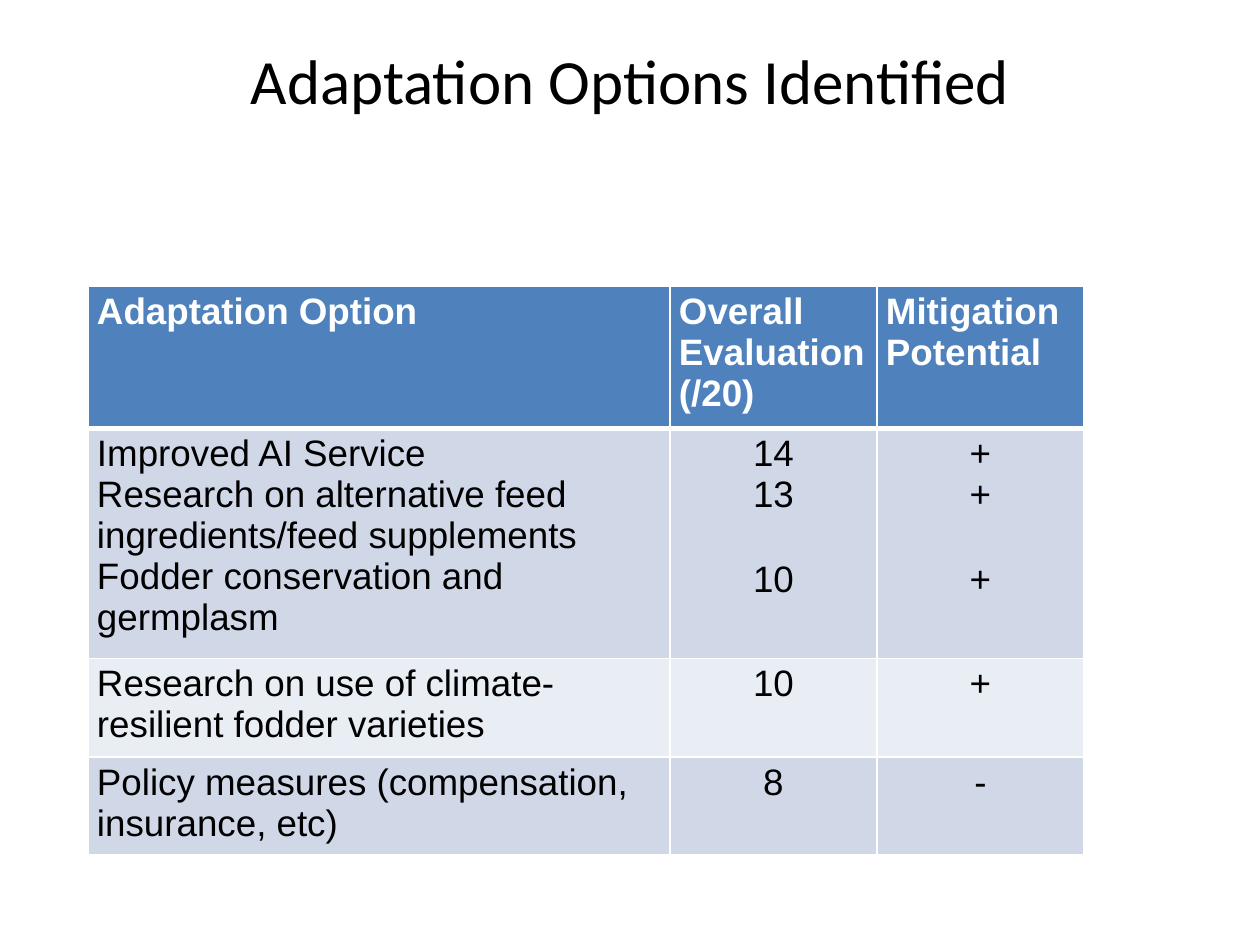
import lxml.etree
import pptx
import pptx.dml.color
import pptx.enum.text
import pptx.oxml.ns
import pptx.util

RGBColor = pptx.dml.color.RGBColor
ALIGN = pptx.enum.text.PP_ALIGN
ANCHOR = pptx.enum.text.MSO_ANCHOR

BLACK = RGBColor(0x00, 0x00, 0x00)
WHITE = RGBColor(0xFF, 0xFF, 0xFF)
HEADER_BLUE = RGBColor(0x4F, 0x81, 0xBD)
BAND_DARK = RGBColor(0xD0, 0xD8, 0xE8)
BAND_LIGHT = RGBColor(0xE9, 0xED, 0xF4)

PX_PER_INCH = 126
TITLE = "Adaptation Options Identified"
TITLE_BOX = (63, 0, 1134, 158)
TABLE_ORIGIN = (88, 286)
COLUMN_WIDTHS = [582, 207, 207]
ROW_HEIGHTS = [141, 186, 98, 98]
MARGIN_X, MARGIN_Y = 9, 5
SKIPPED_LINE = 25

HEADER = [["Adaptation Option"], ["Overall Evaluation (/20)"], ["Mitigation Potential"]]
OPTIONS = [
    [
        [
            "Improved AI Service",
            "Research on alternative feed ingredients/feed supplements",
            "Fodder conservation and germplasm",
        ],
        ["14", "13", "10"],
        ["+", "+", "+"],
    ],
    [["Research on use of climate-resilient fodder varieties"], ["10"], ["+"]],
    [["Policy measures (compensation, insurance, etc)"], ["8"], ["-"]],
]


def px(value):
    return pptx.util.Emu(round(value * 914400 / PX_PER_INCH))


def write_text(frame, lines, *, font, size, color, bold=False, align=ALIGN.LEFT, gap_before_third=0):
    frame.word_wrap = True
    for index, line in enumerate(lines):
        paragraph = frame.paragraphs[0] if index == 0 else frame.add_paragraph()
        paragraph.alignment = align
        if index == 2 and gap_before_third:
            paragraph.space_before = pptx.util.Pt(gap_before_third)
        run = paragraph.add_run()
        run.text = line
        run.font.name = font
        run.font.size = pptx.util.Pt(size)
        run.font.bold = bold
        run.font.color.rgb = color


def add_borders(cell, top, bottom):
    qn = pptx.oxml.ns.qn
    properties = cell._tc.get_or_add_tcPr()
    for side, width in (("L", 1), ("R", 1), ("T", top), ("B", bottom)):
        line = lxml.etree.SubElement(properties, qn(f"a:ln{side}"), w=str(pptx.util.Pt(width)))
        fill = lxml.etree.SubElement(line, qn("a:solidFill"))
        lxml.etree.SubElement(fill, qn("a:srgbClr"), val=str(WHITE))


def add_title(slide):
    frame = slide.shapes.add_textbox(*map(px, TITLE_BOX)).text_frame
    frame.vertical_anchor = ANCHOR.MIDDLE
    write_text(frame, [TITLE], font="Calibri", size=36, color=BLACK, align=ALIGN.CENTER)


def add_options_table(slide):
    rows = [HEADER] + OPTIONS
    size = (sum(COLUMN_WIDTHS), sum(ROW_HEIGHTS))
    table = slide.shapes.add_table(
        len(rows), len(COLUMN_WIDTHS), *map(px, TABLE_ORIGIN + size)
    ).table
    for column, width in zip(table.columns, COLUMN_WIDTHS):
        column.width = px(width)
    for row, height in zip(table.rows, ROW_HEIGHTS):
        row.height = px(height)

    for row_index, row in enumerate(rows):
        is_header = row_index == 0
        band = BAND_DARK if row_index % 2 else BAND_LIGHT
        for column_index, lines in enumerate(row):
            is_score = column_index > 0 and not is_header
            cell = table.cell(row_index, column_index)
            cell.margin_left = cell.margin_right = px(MARGIN_X)
            cell.margin_top = cell.margin_bottom = px(MARGIN_Y)
            add_borders(cell, top=3 if row_index == 1 else 1, bottom=3 if is_header else 1)
            cell.fill.solid()
            cell.fill.fore_color.rgb = HEADER_BLUE if is_header else band
            write_text(
                cell.text_frame,
                lines,
                font="Arial",
                size=21,
                color=WHITE if is_header else BLACK,
                bold=is_header,
                align=ALIGN.CENTER if is_score else ALIGN.LEFT,
                gap_before_third=SKIPPED_LINE if is_score else 0,
            )


def main():
    presentation = pptx.Presentation()
    presentation.slide_width = px(1260)
    presentation.slide_height = px(945)
    slide = presentation.slides.add_slide(presentation.slide_layouts[6])
    add_title(slide)
    add_options_table(slide)
    presentation.save("out.pptx")


if __name__ == "__main__":
    main()
